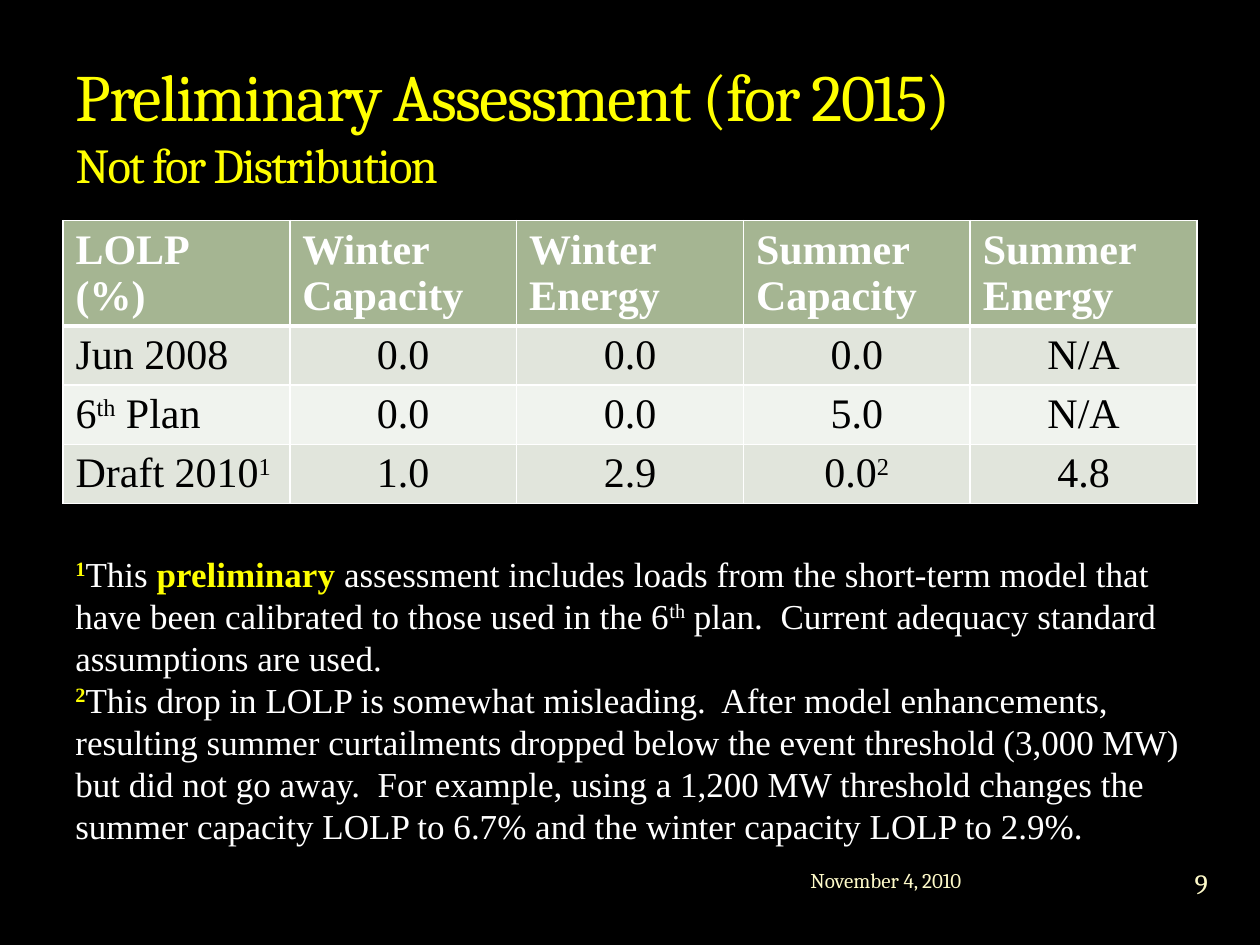
from lxml.etree import SubElement as Sub
from pptx import Presentation
from pptx.dml.color import RGBColor as RGB
from pptx.enum.text import MSO_ANCHOR as Anchor, MSO_AUTO_SIZE as Auto, PP_ALIGN as Align
from pptx.oxml.ns import qn
from pptx.util import Pt

BLACK = RGB(0, 0, 0)
WHITE = RGB(255, 255, 255)
YELLOW = RGB(255, 255, 0)
CREAM = RGB(0xFE, 0xFA, 0xC9)
SAGE = RGB(0xA5, 0xB5, 0x92)
BANDS = [RGB(0xE1, 0xE5, 0xDC), RGB(0xF0, 0xF3, 0xEE)]
SERIF = "Times New Roman"
HEAD = "Cambria"

ROWS = [
    [["LOLP", "(%)"], ["Winter Capacity"], ["Winter Energy"],
     ["Summer Capacity"], ["Summer Energy"]],
    ["Jun 2008", "0.0", "0.0", "0.0", "N/A"],
    ["6^th^ Plan", "0.0", "0.0", "5.0", "N/A"],
    ["Draft 2010^1^", "1.0", "2.9", "0.0^2^", "4.8"],
]
NOTES = [
    [("^1^", True), ("This ", False), ("preliminary ", True),
     ("assessment includes loads from the short-term model that have been "
      "calibrated to those used in the 6^th^ plan.  Current adequacy standard "
      "assumptions are used.", False)],
    [("^2^", True),
     ("This drop in LOLP is somewhat misleading.  After model enhancements, "
      "resulting summer curtailments dropped below the event threshold "
      "(3,000 MW) but did not go away.  For example, using a 1,200 MW threshold "
      "changes the summer capacity LOLP to 6.7% and the winter capacity LOLP "
      "to 2.9%.", False)],
]


def add_runs(para, text, size, color, face=SERIF, bold=False):
    for i, part in enumerate(text.split("^")):
        if not part:
            continue
        run = para.add_run()
        run.text = part
        font = run.font
        font.size, font.name, font.bold = Pt(size), face, bold
        font.color.rgb = color
        if i % 2:
            run._r.get_or_add_rPr().set("baseline", "30000")


def next_para(frame, i):
    return frame.add_paragraph() if i else frame.paragraphs[0]


def add_edges(cell, **widths):
    props = cell._tc.get_or_add_tcPr()
    for side in "LRTB":
        line = Sub(props, qn("a:ln" + side), w=str(Pt(widths.get(side, 1))))
        fill = Sub(line, qn("a:solidFill"))
        Sub(fill, qn("a:srgbClr"), val=str(WHITE))


def add_title(slide, box):
    title = slide.shapes.title
    title.left, title.top, title.width, title.height = map(Pt, box)
    frame = title.text_frame
    frame.auto_size = Auto.NONE
    frame.vertical_anchor = Anchor.BOTTOM
    para = frame.paragraphs[0]
    para.alignment = Align.LEFT
    add_runs(para, "Preliminary Assessment (for 2015)", 37.8, YELLOW, HEAD)
    para.add_line_break()
    add_runs(para, "Not for Distribution", 27.9, YELLOW, HEAD)
    for run in para.runs:
        run.font._element.set("spc", "-100")


def add_grid(slide, box):
    left, top, width, height = box
    table = slide.shapes.add_table(len(ROWS), len(ROWS[0]), *map(Pt, box)).table
    first = 60
    for col in table.columns:
        col.width = Pt(width / len(ROWS[0]))
    for r, row in enumerate(ROWS):
        table.rows[r].height = Pt((height - first) / (len(ROWS) - 1) if r else first)
        for c, item in enumerate(row):
            cell = table.cell(r, c)
            add_edges(cell, T=3 if r == 1 else 1, B=1 if r else 3)
            cell.fill.solid()
            cell.fill.fore_color.rgb = BANDS[(r - 1) % 2] if r else SAGE
            for i, text in enumerate([item] if r else item):
                para = next_para(cell.text_frame, i)
                para.alignment = Align.CENTER if r and c else Align.LEFT
                add_runs(para, text, 24, BLACK if r else WHITE, bold=not r)


def add_notes(slide, box):
    frame = slide.shapes.add_textbox(*map(Pt, box)).text_frame
    frame.word_wrap = True
    for i, parts in enumerate(NOTES):
        para = next_para(frame, i)
        for text, key in parts:
            add_runs(para, text, 20, YELLOW if key else WHITE, bold=key)


def add_label(slide, box, text, size, align, inset):
    frame = slide.shapes.add_textbox(*map(Pt, box)).text_frame
    frame.word_wrap = True
    frame.vertical_anchor = Anchor.MIDDLE
    frame.margin_left = frame.margin_right = Pt(inset)
    frame.margin_top = frame.margin_bottom = Pt(inset / 2)
    para = frame.paragraphs[0]
    para.alignment = align
    add_runs(para, text, size, CREAM, HEAD)


def main():
    deck = Presentation()
    deck.slide_width, deck.slide_height = Pt(720), Pt(540)
    slide = deck.slides.add_slide(deck.slide_layouts[5])
    back = slide.background.fill
    back.solid()
    back.fore_color.rgb = BLACK
    add_title(slide, (36, 24, 648, 90))
    add_grid(slide, (36, 126, 648, 161.4))
    add_label(slide, (456, 488, 204, 30), "November 4, 2010", 12, Align.LEFT, 7.2)
    add_label(slide, (662.4, 487, 48, 36), "9", 16, Align.CENTER, 0)
    add_notes(slide, (36, 312, 648, 177))
    deck.save("out.pptx")


if __name__ == "__main__":
    main()
